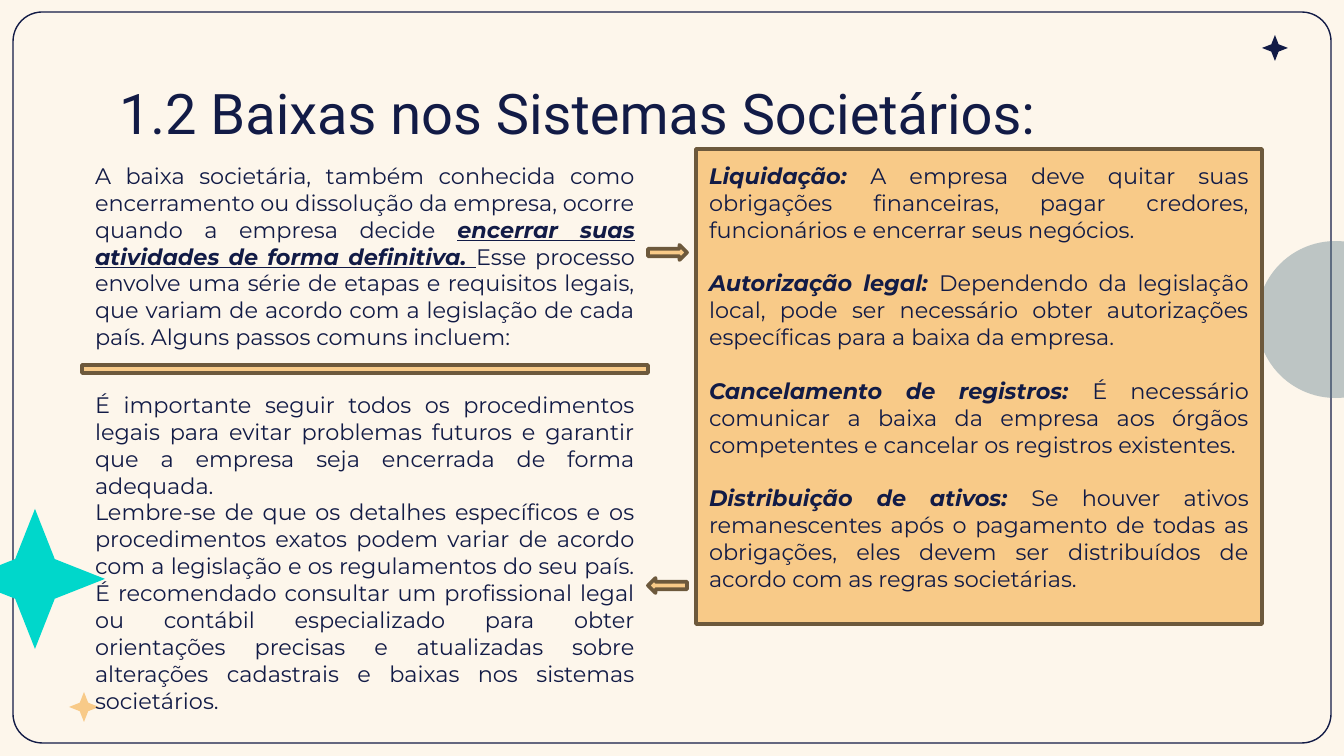
from lxml import etree
from pptx import Presentation
from pptx.dml.color import RGBColor
from pptx.enum.shapes import MSO_SHAPE
from pptx.enum.text import MSO_ANCHOR, MSO_AUTO_SIZE, PP_ALIGN
from pptx.oxml.ns import qn
from pptx.util import Pt

RECT, ROUNDED = MSO_SHAPE.RECTANGLE, MSO_SHAPE.ROUNDED_RECTANGLE
OVAL, STAR, ARROW = MSO_SHAPE.OVAL, MSO_SHAPE.STAR_4_POINT, MSO_SHAPE.RIGHT_ARROW
LEFT, JUSTIFY, TOP = PP_ALIGN.LEFT, PP_ALIGN.JUSTIFY, MSO_ANCHOR.TOP
NO_FIT = MSO_AUTO_SIZE.NONE

WIDTH, HEIGHT = 1344, 756
SCALE = 9144000 / WIDTH
COLORS = {
    "paper": "FDF6EB",
    "navy": "121B46",
    "slate": "577785",
    "teal": "00D7CB",
    "peach": "F8CA88",
    "brown": "6D593C",
}
COLUMN_WIDTH, COLUMN_TOP = 566, 149
LEFT_COLUMN, RIGHT_COLUMN = 82, 696


def draw(kind, box, fill=None, line=None, line_width=2):
    shape = slide.shapes.add_shape(kind, *[round(v * SCALE) for v in box])
    shape.shadow.inherit = False
    if fill:
        shape.fill.solid()
        shape.fill.fore_color.rgb = RGBColor.from_string(COLORS[fill])
    else:
        shape.fill.background()
    if line:
        shape.line.color.rgb = RGBColor.from_string(COLORS[line])
        shape.line.width = Pt(line_width)
    else:
        shape.line.fill.background()
    return shape


def write(holder, box, paragraphs, size=12, font="Montserrat", align=JUSTIFY, gap=0, underline=False):
    holder.left, holder.top, holder.width, holder.height = [round(v * SCALE) for v in box]
    slide.shapes._spTree.append(holder._element)
    frame = holder.text_frame
    frame.word_wrap = True
    frame.auto_size = NO_FIT
    frame.vertical_anchor = TOP
    frame.margin_left = frame.margin_right = frame.margin_top = frame.margin_bottom = round(13 * SCALE)
    for index, runs in enumerate(paragraphs):
        paragraph = frame.add_paragraph() if index else frame.paragraphs[0]
        paragraph.alignment = align
        paragraph.space_before = Pt(0)
        paragraph.space_after = Pt(gap)
        properties = paragraph._p.get_or_add_pPr()
        properties.set("marL", "0")
        properties.set("indent", "0")
        etree.SubElement(properties, qn("a:buNone"))
        for text, strong in runs:
            run = paragraph.add_run()
            run.text = text
            run.font.name = font
            run.font.size = Pt(size)
            run.font.color.rgb = RGBColor.from_string(COLORS["navy"])
            run.font.bold = run.font.italic = strong
            run.font.underline = strong and underline


deck = Presentation()
deck.slide_width, deck.slide_height = round(WIDTH * SCALE), round(HEIGHT * SCALE)
slide = deck.slides.add_slide(deck.slide_layouts[3])
title, introduction, steps = slide.placeholders
slide.background.fill.solid()
slide.background.fill.fore_color.rgb = RGBColor.from_string(COLORS["paper"])

border = draw(ROUNDED, (13, 12, 1318, 731), line="navy", line_width=0.75)
border.adjustments[0] = 0.04

circle = draw(OVAL, (1257, 241, 157, 157), "slate")
circle_color = circle._element.spPr.find(qn("a:solidFill"))[0]
etree.SubElement(circle_color, qn("a:alpha"), val="38000")

for x, y, side, color in [
    (-35, 509, 140, "teal"),
    (69, 692, 30, "peach"),
    (1262, 35, 26, "navy"),
]:
    star = draw(STAR, (x, y, side, side), color)
    star.adjustments[0] = 0.2

draw(RECT, (RIGHT_COLUMN, COLUMN_TOP, COLUMN_WIDTH, 475), "peach", "brown")

write(title, (106, 66, 1133, 85), [[("1.2 Baixas nos Sistemas Societários:", False)]],
      size=30, font="Roboto", align=LEFT)

write(steps, (RIGHT_COLUMN, COLUMN_TOP, COLUMN_WIDTH, 356), [
    [("Liquidação: ", True),
     ("A empresa deve quitar suas obrigações financeiras, pagar credores, "
      "funcionários e encerrar seus negócios.", False)],
    [("Autorização legal: ", True),
     ("Dependendo da legislação local, pode ser necessário obter autorizações "
      "específicas para a baixa da empresa.", False)],
    [("Cancelamento de registros: ", True),
     ("É necessário comunicar a baixa da empresa aos órgãos competentes e "
      "cancelar os registros existentes.", False)],
    [("Distribuição de ativos: ", True),
     ("Se houver ativos remanescentes após o pagamento de todas as obrigações, "
      "eles devem ser distribuídos de acordo com as regras societárias.", False)],
], gap=14.4)

write(introduction, (LEFT_COLUMN, COLUMN_TOP, COLUMN_WIDTH, 215), [
    [("A baixa societária, também conhecida como encerramento ou dissolução da "
      "empresa, ocorre quando a empresa decide ", False),
     ("encerrar suas atividades de forma definitiva. ", True),
     ("Esse processo envolve uma série de etapas e requisitos legais, que variam "
      "de acordo com a legislação de cada país. Alguns passos comuns incluem:", False)],
], underline=True)

for y, angle in [(245, 0), (578, 180)]:
    arrow = draw(ARROW, (648, y, 39, 15), "peach", "brown")
    arrow.rotation = angle

advice = slide.shapes.add_textbox(0, 0, 0, 0)
write(advice, (LEFT_COLUMN, 378, COLUMN_WIDTH, 215), [
    [("É importante seguir todos os procedimentos legais para evitar problemas "
      "futuros e garantir que a empresa seja encerrada de forma adequada.", False)],
    [("Lembre-se de que os detalhes específicos e os procedimentos exatos podem "
      "variar de acordo com a legislação e os regulamentos do seu país. É "
      "recomendado consultar um profissional legal ou contábil especializado para "
      "obter orientações precisas e atualizadas sobre alterações cadastrais e "
      "baixas nos sistemas societários.", False)],
])

draw(RECT, (LEFT_COLUMN, 365, COLUMN_WIDTH, 8), "peach", "brown")

deck.save("out.pptx")
